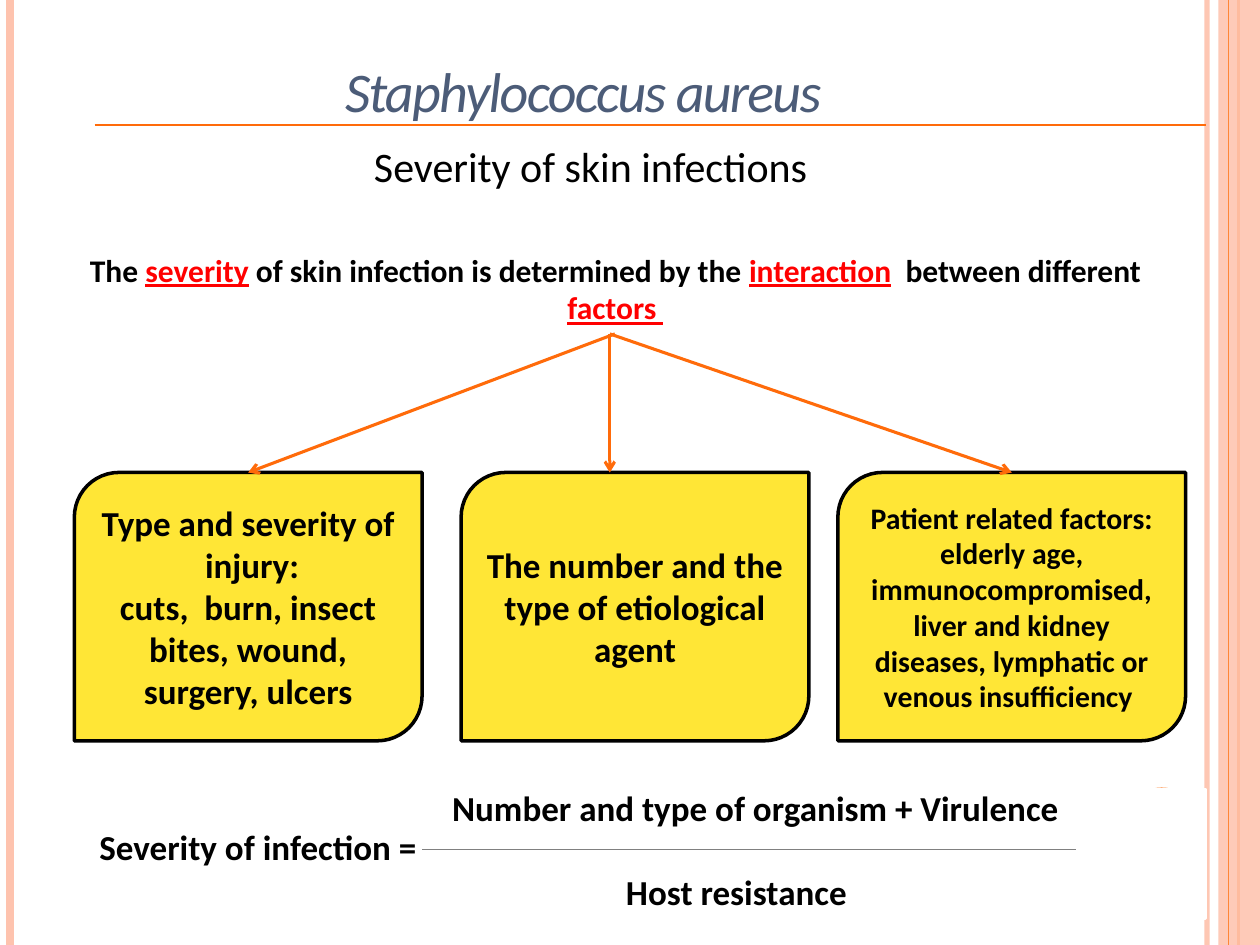
from lxml import etree
from pptx import Presentation
from pptx.dml.color import RGBColor
from pptx.enum.shapes import MSO_CONNECTOR, MSO_SHAPE
from pptx.enum.text import MSO_ANCHOR, PP_ALIGN
from pptx.oxml.ns import qn
from pptx.util import Inches, Pt

STRAIGHT = MSO_CONNECTOR.STRAIGHT
RECT, OVAL, LEAF = MSO_SHAPE.RECTANGLE, MSO_SHAPE.OVAL, MSO_SHAPE.ROUND_2_DIAG_RECTANGLE
LEFT, CENTER = PP_ALIGN.LEFT, PP_ALIGN.CENTER
TOP, MIDDLE, BOTTOM = MSO_ANCHOR.TOP, MSO_ANCHOR.MIDDLE, MSO_ANCHOR.BOTTOM

FONT = "Calibri"
BLACK, WHITE, RED = "000000", "FFFFFF", "FF0000"
ORANGE, PEACH, AMBER = "FF6B0A", "FEC3AE", "FE8637"
YELLOW, SLATE, GREY = "FFE636", "4C5C78", "808080"

TITLE = "Staphylococcus aureus"
SUBTITLE = "Severity of skin infections"
STATEMENT = [
    ("The ", False), ("severity", True),
    (" of skin infection is determined by the ", False), ("interaction", True),
    ("  between different ", False), ("factors ", True),
]
FACTORS = [
    (0.59, 20, 1.97, 4.88, ["Type and severity of  injury:",
                            "cuts,  burn, insect bites, wound, surgery, ulcers"]),
    (3.66, 20, 4.84, 4.84, ["The number and the type of etiological agent"]),
    (6.65, 17, 8.03, 4.84, ["Patient related factors: elderly age, immunocompromised, "
                            "liver and kidney diseases, lymphatic or venous insufficiency "]),
]
FACTOR_TOP, FACTOR_WIDTH, FACTOR_HEIGHT = 3.75, 2.76, 2.13
ARROW_TOP = 2.65
RESULT = "Severity of infection ="
FRACTION = [("Number and type of organism + Virulence", 0.19, 0),
            ("Host resistance", 1.57, 24.4)]
STRIPES = [(9.58, PEACH, 3, 93), (0.08, PEACH, 4.5, 100), (9.83, AMBER, 1.5, 100)]


def color(value):
    return RGBColor.from_string(value)


def set_alpha(element, percent):
    if percent < 100:
        tint = next(element.iter(qn("a:srgbClr")))
        etree.SubElement(tint, qn("a:alpha"), val=str(percent * 1000))


def add_line(page, start, end, tint, width, alpha=100, arrow=False):
    line = page.shapes.add_connector(STRAIGHT, *map(Inches, start + end))
    line.line.color.rgb = color(tint)
    line.line.width = Pt(width)
    outline = line.line._get_or_add_ln()
    set_alpha(outline, alpha)
    if arrow:
        etree.SubElement(outline, qn("a:tailEnd"), type="arrow")
    etree.SubElement(line._element.spPr, qn("a:effectLst"))


def add_block(page, kind, place, fill, border=None, alpha=100):
    block = page.shapes.add_shape(kind, *map(Inches, place))
    block.shadow.inherit = False
    block.fill.solid()
    block.fill.fore_color.rgb = color(fill)
    set_alpha(block._element.spPr, alpha)
    if border:
        block.line.color.rgb = color(border)
        block.line.width = Pt(2)
    else:
        block.line.fill.background()
    return block


def add_span(para, text, size, tint=BLACK, **extra):
    span = para.add_run()
    span.text = text
    for name, value in {"name": FONT, "size": Pt(size), **extra}.items():
        setattr(span.font, name, value)
    span.font.color.rgb = color(tint)
    return span


def add_para(frame, index, align=LEFT):
    para = frame.add_paragraph() if index else frame.paragraphs[0]
    para.alignment = align
    return para


def add_text(page, place, anchor=TOP, wrap=True):
    frame = page.shapes.add_textbox(*map(Inches, place)).text_frame
    frame.word_wrap = wrap
    frame.vertical_anchor = anchor
    return frame


def add_decoration(page):
    for x, tint, width, alpha in STRIPES:
        add_line(page, (x, 0), (x, 7.5), tint, width, alpha)
    add_block(page, RECT, (9.67, 0, 0.33, 7.5), PEACH, alpha=87)
    add_line(page, (9.75, 0), (9.75, 7.5), AMBER, 0.75)
    add_block(page, OVAL, (8.92, 6.25, 0.6, 0.6), AMBER)
    add_block(page, RECT, (8.57, 6.27, 1, 1.02), WHITE, WHITE)


def add_headings(page):
    title = add_text(page, (2.64, 0.36, 5.12, 0.67), BOTTOM)
    span = add_span(add_para(title, 0), TITLE, 32, SLATE, italic=True)
    span.font._element.set("spc", "-100")
    add_line(page, (0.75, 0.99), (9.57, 0.99), ORANGE, 1)
    subtitle = add_text(page, (2.87, 1.07, 3.7, 0.5))
    add_span(add_para(subtitle, 0), SUBTITLE, 24)
    para = add_para(add_text(page, (0.28, 1.94, 9.21, 0.71)), 0, CENTER)
    for text, key in STATEMENT:
        add_span(para, text, 18, RED if key else BLACK, bold=True, underline=key)


def add_factors(page):
    for left, size, arrow_end, arrow_start, lines in FACTORS:
        place = (left, FACTOR_TOP, FACTOR_WIDTH, FACTOR_HEIGHT)
        frame = add_block(page, LEAF, place, YELLOW, BLACK).text_frame
        frame.word_wrap = True
        frame.vertical_anchor = MIDDLE
        for index, text in enumerate(lines):
            add_span(add_para(frame, index, CENTER), text, size, bold=True)
        add_line(page, (arrow_start, ARROW_TOP), (arrow_end, FACTOR_TOP),
                 ORANGE, 1.75, arrow=True)


def add_formula(page):
    result = add_text(page, (0.69, 6.5, 2.75, 0.44), MIDDLE, wrap=False)
    add_span(add_para(result, 0), RESULT, 20, bold=True)
    add_line(page, (3.35, 6.74), (8.54, 6.74), GREY, 0.5)
    fraction = add_text(page, (3.3, 6.19, 5.36, 1.11))
    for index, (text, indent, gap) in enumerate(FRACTION):
        para = add_para(fraction, index)
        para.space_before = Pt(gap)
        para._p.get_or_add_pPr().set("marL", str(Inches(indent)))
        add_span(para, text, 20, bold=True)


def main():
    deck = Presentation()
    deck.slide_width, deck.slide_height = Inches(10), Inches(7.5)
    page = deck.slides.add_slide(deck.slide_layouts[6])
    add_decoration(page)
    add_headings(page)
    add_factors(page)
    add_formula(page)
    deck.save("out.pptx")


if __name__ == "__main__":
    main()
